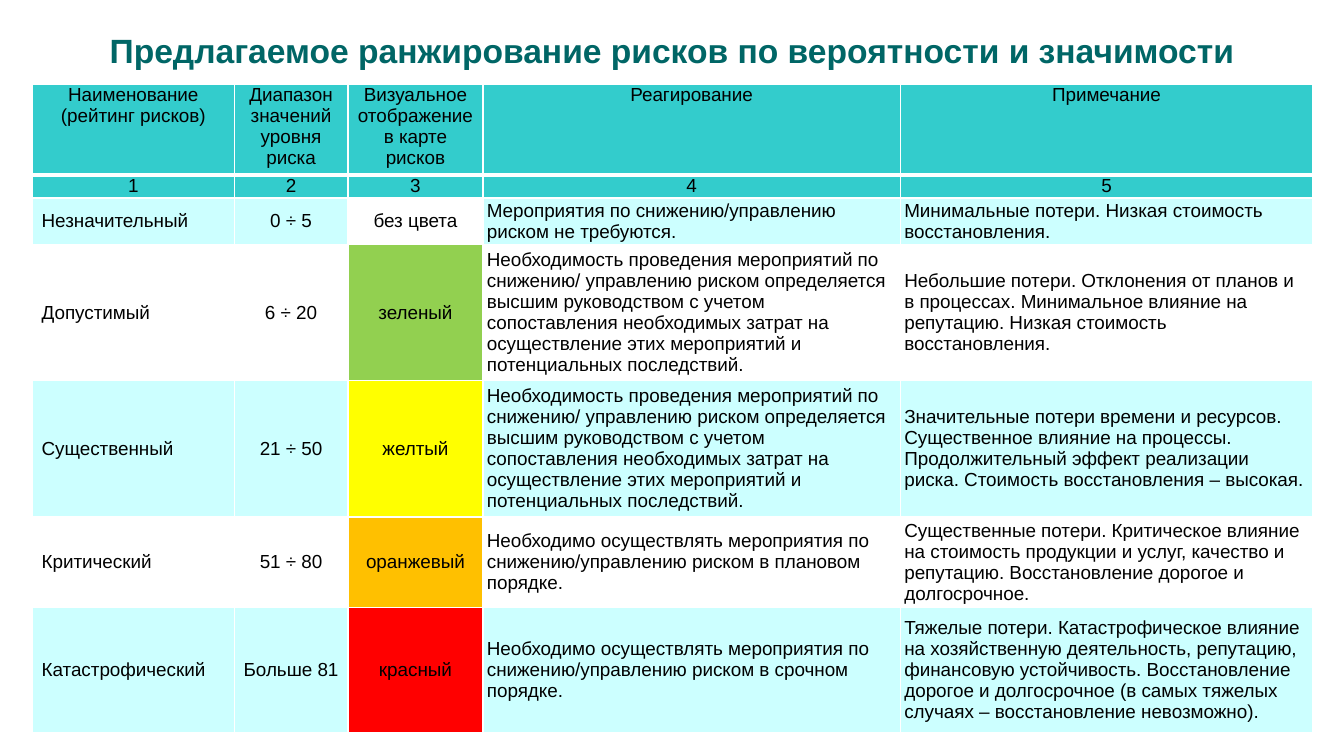
from dataclasses import dataclass

from lxml.etree import SubElement
from pptx import Presentation
from pptx.dml.color import RGBColor
from pptx.enum.text import MSO_ANCHOR, PP_ALIGN
from pptx.oxml.ns import qn
from pptx.util import Cm, Pt


@dataclass(frozen=True)
class Theme:
    font: str = "Arial"
    title_size: float = 24
    table_size: float = 13.5
    title: str = "006666"
    text: str = "000000"
    header: str = "33CCCC"
    band: str = "CCFFFF"
    white: str = "FFFFFF"
    border: float = 1
    header_border: float = 3


THEME = Theme()
COLUMN_WIDTHS = (5.08, 2.87, 3.4, 10.52, 10.39)
ROW_HEIGHTS = (2.28, 0.54, 1.18, 3.43, 3.43, 2.27, 3.16)
CELL_MARGIN = 0.1
NAME_MARGIN = 0.23
COLOUR_COLUMN = 2
CENTRED_COLUMNS = (1, COLOUR_COLUMN)

HEADINGS = (
    "Наименование\n(рейтинг рисков)",
    "Диапазон значений уровня риска",
    "Визуальное отображение в карте рисков",
    "Реагирование",
    "Примечание",
)
ASSESSED_RESPONSE = (
    "Необходимость проведения мероприятий по снижению/ управлению риском "
    "определяется высшим руководством с учетом сопоставления необходимых затрат "
    "на осуществление этих мероприятий и потенциальных последствий."
)
RISKS = (
    ("Незначительный", "0 ÷ 5", "без цвета",
     "Мероприятия по снижению/управлению риском не требуются.",
     "Минимальные потери. Низкая стоимость восстановления."),
    ("Допустимый", "6 ÷ 20", "зеленый", ASSESSED_RESPONSE,
     "Небольшие потери. Отклонения от планов и в процессах. Минимальное влияние "
     "на репутацию. Низкая стоимость восстановления."),
    ("Существенный", "21 ÷ 50", "желтый", ASSESSED_RESPONSE,
     "Значительные потери времени и ресурсов. Существенное влияние на процессы. "
     "Продолжительный эффект реализации риска. Стоимость восстановления – высокая."),
    ("Критический", "51 ÷ 80", "оранжевый",
     "Необходимо осуществлять мероприятия по снижению/управлению риском "
     "в плановом порядке.",
     "Существенные потери. Критическое влияние на стоимость продукции и услуг, "
     "качество и репутацию. Восстановление дорогое и долгосрочное."),
    ("Катастрофический", "Больше 81", "красный",
     "Необходимо осуществлять мероприятия по снижению/управлению риском "
     "в срочном порядке.",
     "Тяжелые потери. Катастрофическое влияние на хозяйственную деятельность, "
     "репутацию, финансовую устойчивость. Восстановление дорогое и долгосрочное "
     "(в самых тяжелых случаях – восстановление невозможно)."),
)
RISK_COLOURS = ("FFFFFF", "92D050", "FFFF00", "FFC000", "FF0000")


def write_text(text_frame, text, size=THEME.table_size, colour=THEME.text,
               bold=False, alignment=PP_ALIGN.LEFT):
    text_frame.word_wrap = True
    text_frame.text = text
    for paragraph in text_frame.paragraphs:
        paragraph.alignment = alignment
        for run in paragraph.runs:
            run.font.name = THEME.font
            run.font.size = Pt(size)
            run.font.bold = bold
            run.font.color.rgb = RGBColor.from_string(colour)


def set_borders(cell, top=THEME.border, bottom=THEME.border):
    """Draw the white cell borders; call before the cell gets its fill."""
    properties = cell._tc.get_or_add_tcPr()
    widths = {"a:lnL": THEME.border, "a:lnR": THEME.border, "a:lnT": top, "a:lnB": bottom}
    for tag, width in widths.items():
        line = SubElement(properties, qn(tag), w=str(Pt(width)))
        fill = SubElement(line, qn("a:solidFill"))
        SubElement(fill, qn("a:srgbClr"), val=THEME.white)


def format_cell(cell, text, fill, anchor=MSO_ANCHOR.MIDDLE, left=CELL_MARGIN,
                alignment=PP_ALIGN.LEFT, **borders):
    set_borders(cell, **borders)
    cell.fill.solid()
    cell.fill.fore_color.rgb = RGBColor.from_string(fill)
    cell.vertical_anchor = anchor
    cell.margin_left, cell.margin_right = Cm(left), Cm(CELL_MARGIN)
    cell.margin_top = cell.margin_bottom = 0
    write_text(cell.text_frame, text, alignment=alignment)


def add_title(slide, text):
    box = slide.shapes.add_textbox(0, Cm(0.64), Cm(33.87), Cm(1.28))
    write_text(box.text_frame, text, size=THEME.title_size, colour=THEME.title,
               bold=True, alignment=PP_ALIGN.CENTER)


def add_empty_table(slide):
    frame = slide.shapes.add_table(
        len(ROW_HEIGHTS), len(COLUMN_WIDTHS), Cm(0.82), Cm(2.13),
        Cm(sum(COLUMN_WIDTHS)), Cm(sum(ROW_HEIGHTS)))
    table = frame.table
    table.first_row = table.horz_banding = False
    for column, width in zip(table.columns, COLUMN_WIDTHS):
        column.width = Cm(width)
    for row, height in zip(table.rows, ROW_HEIGHTS):
        row.height = Cm(height)
    return table


def fill_header(table):
    for index, heading in enumerate(HEADINGS):
        shared = {"fill": THEME.header, "anchor": MSO_ANCHOR.TOP, "alignment": PP_ALIGN.CENTER}
        format_cell(table.cell(0, index), heading, bottom=THEME.header_border, **shared)
        format_cell(table.cell(1, index), str(index + 1), top=THEME.header_border, **shared)


def fill_risks(table):
    for number, (risk, risk_colour) in enumerate(zip(RISKS, RISK_COLOURS)):
        band = THEME.white if number % 2 else THEME.band
        for index, text in enumerate(risk):
            format_cell(
                table.cell(number + 2, index), text,
                fill=risk_colour if index == COLOUR_COLUMN else band,
                left=NAME_MARGIN if index == 0 else CELL_MARGIN,
                alignment=PP_ALIGN.CENTER if index in CENTRED_COLUMNS else PP_ALIGN.LEFT)


def main():
    presentation = Presentation()
    presentation.slide_width, presentation.slide_height = Cm(33.87), Cm(19.05)
    slide = presentation.slides.add_slide(presentation.slide_layouts[6])
    add_title(slide, "Предлагаемое ранжирование рисков по вероятности и значимости")
    table = add_empty_table(slide)
    fill_header(table)
    fill_risks(table)
    presentation.save("out.pptx")


if __name__ == "__main__":
    main()
